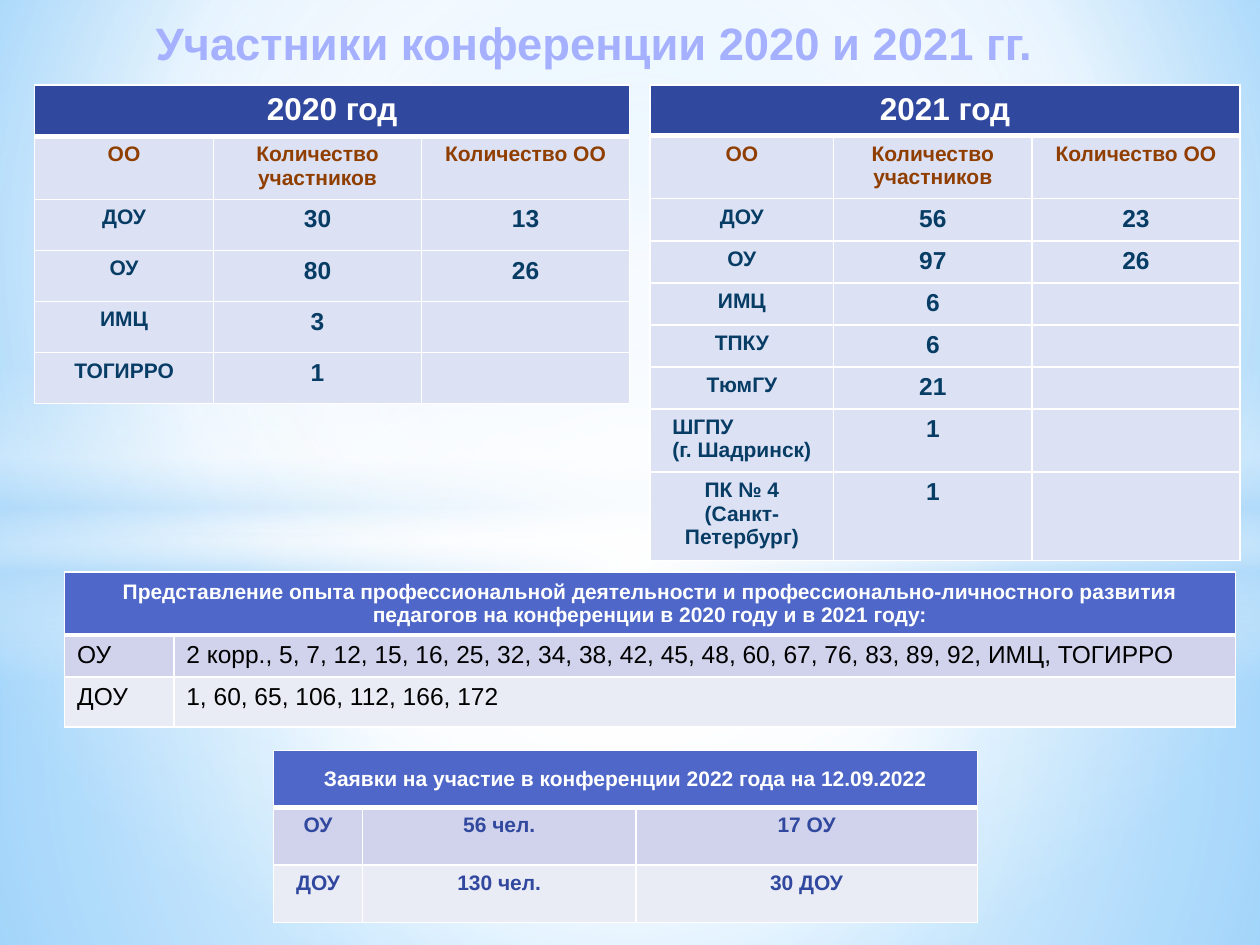
from dataclasses import dataclass
from itertools import cycle

from lxml.etree import SubElement
from pptx import Presentation
from pptx.dml.color import RGBColor
from pptx.enum.shapes import MSO_SHAPE
from pptx.enum.text import MSO_ANCHOR, PP_ALIGN
from pptx.oxml.ns import qn
from pptx.util import Pt


@dataclass(frozen=True)
class Theme:
    font: str = "Arial"
    white: str = "FFFFFF"
    haze: str = "B4DCFA"
    title: str = "A5B0FF"
    navy: str = "31489F"
    blue: str = "4E67C8"
    pale: str = "DCE1F4"
    band_dark: str = "D0D3EB"
    band_light: str = "E9EBF5"
    brown: str = "903E00"
    teal: str = "073C65"
    black: str = "000000"
    title_size: float = 25.9
    year_size: int = 18
    number_size: int = 14
    label_size: int = 12


theme = Theme()
LEFT, CENTER = PP_ALIGN.LEFT, PP_ALIGN.CENTER


def paint_gradient(fill, element, stops, focus=None):
    """Fill with (position, colour, opacity) stops: circular around focus, else top to bottom."""
    fill.gradient()
    gradient = next(element.iter(qn("a:gradFill")))
    gradient.clear()
    gradient.set("rotWithShape", "1")
    stop_list = SubElement(gradient, qn("a:gsLst"))
    for position, color, opacity in stops:
        stop = SubElement(stop_list, qn("a:gs"), pos=str(position * 1000))
        color_node = SubElement(stop, qn("a:srgbClr"), val=color)
        SubElement(color_node, qn("a:alpha"), val=str(opacity * 1000))
    if focus:
        circle = SubElement(gradient, qn("a:path"), path="circle")
        sides = {side: str(share * 1000) for side, share in zip("ltrb", focus)}
        SubElement(circle, qn("a:fillToRect"), **sides)
    else:
        SubElement(gradient, qn("a:lin"), ang="5400000", scaled="0")


def add_table(left, top, widths, heights, rows, row_fills, row_styles, header_anchor):
    """Add a table whose first row is one merged header; a style is (size, colour, bold, alignment)."""
    frame = slide.shapes.add_table(len(rows), len(widths), Pt(left), Pt(top),
                                   Pt(sum(widths)), Pt(sum(heights)))
    table = frame.table
    table.first_row = table.horz_banding = False
    for column, width in zip(table.columns, widths):
        column.width = Pt(width)
    for row, height in zip(table.rows, heights):
        row.height = Pt(height)
    table.cell(0, 0).merge(table.cell(0, len(widths) - 1))
    table.cell(0, 0).vertical_anchor = header_anchor

    for row_index, (texts, fill, styles) in enumerate(zip(rows, row_fills, row_styles)):
        for column_index in range(len(widths)):
            cell = table.cell(row_index, column_index)
            properties = cell._tc.get_or_add_tcPr()
            thick_side = {0: "B", 1: "T"}.get(row_index)
            for side in "LRTB":
                line = SubElement(properties, qn(f"a:ln{side}"),
                                  w=str(Pt(3 if side == thick_side else 1)))
                SubElement(SubElement(line, qn("a:solidFill")), qn("a:srgbClr"), val=theme.white)
            cell.fill.solid()
            cell.fill.fore_color.rgb = RGBColor.from_string(fill)
            if column_index >= len(texts):
                SubElement(cell.text_frame.paragraphs[0]._p, qn("a:endParaRPr"),
                           sz=str(theme.label_size * 100))
                continue
            size, color, bold, alignment = styles[column_index]
            for index, text in enumerate(texts[column_index].split("\n")):
                frame_text = cell.text_frame
                paragraph = frame_text.add_paragraph() if index else frame_text.paragraphs[0]
                paragraph.alignment = alignment
                run = paragraph.add_run()
                run.text = text
                run.font.name = theme.font
                run.font.size = Pt(size)
                run.font.bold = bold
                run.font.color.rgb = RGBColor.from_string(color)
    return table


presentation = Presentation()
presentation.slide_width, presentation.slide_height = Pt(720), Pt(540)
slide = presentation.slides.add_slide(presentation.slide_layouts[6])

# Background glow
paint_gradient(slide.background.fill, slide.element,
               [(0, "9ED5FF", 100), (60, theme.white, 100), (100, "5BB9FF", 100)],
               (20, 10, 20, 60))
middle = (50, 50, 50, 50)
white, haze = theme.white, theme.haze
glows = [
    (MSO_SHAPE.RECTANGLE, 304.5, 235.5, [(0, white, 92), (37, white, 77), (100, haze, 80)], middle),
    (MSO_SHAPE.RECTANGLE, 0, 304.5, [(0, white, 90), (48, white, 63), (100, haze, 80)], middle),
    (MSO_SHAPE.RECTANGLE, 209, 180, [(0, white, 0), (29, white, 30), (45, haze, 40),
                                     (55, white, 26), (65, haze, 60), (100, white, 0)], None),
    (MSO_SHAPE.OVAL, 126, 402, [(0, white, 100), (54, white, 0)], middle),
]
for kind, top, height, stops, focus in glows:
    glow = slide.shapes.add_shape(kind, 0, Pt(top), Pt(720), Pt(height))
    glow.shadow.inherit = False
    glow.line.fill.background()
    paint_gradient(glow.fill, glow.element, stops, focus)

# Title
title = slide.shapes.add_textbox(Pt(39), Pt(9.4), Pt(601), Pt(33.8))
title.text_frame.word_wrap = True
title.text_frame.vertical_anchor = MSO_ANCHOR.BOTTOM
paragraph = title.text_frame.paragraphs[0]
paragraph.alignment = CENTER
run = paragraph.add_run()
run.text = "Участники конференции 2020 и 2021 гг."
run.font.name = theme.font
run.font.size = Pt(theme.title_size)
run.font.bold = True
run.font.color.rgb = RGBColor.from_string(theme.title)

# Professional experience by institution
header_style = [(theme.label_size, theme.white, True, CENTER)]
banded_fills = [theme.blue, theme.band_dark, theme.band_light]
plain_styles = [(theme.number_size, theme.black, False, LEFT)] * 2
add_table(36.9, 326.9, [62.4, 606.8], [33.7, 22.9, 28.5], [
    ["Представление опыта профессиональной деятельности и профессионально-личностного "
     "развития педагогов на конференции в 2020 году и в 2021 году:"],
    ["ОУ", "2 корр., 5, 7, 12, 15, 16, 25, 32, 34, 38, 42, 45, 48, 60, 67, 76, 83, 89, 92, ИМЦ, ТОГИРРО"],
    ["ДОУ", "1, 60, 65, 106, 112, 166, 172"],
], banded_fills, [header_style, plain_styles, plain_styles], MSO_ANCHOR.MIDDLE)

# Participants by year
headings = ["ОО", "Количество участников", "Количество ОО"]
year_style = [(theme.year_size, theme.white, True, CENTER)]
heading_styles = [(theme.label_size, theme.brown, True, CENTER)] * 3
count_styles = [(size, theme.teal, True, CENTER)
                for size in (theme.label_size, theme.number_size, theme.number_size)]
years = [
    (19.8, [102.2, 118.9, 118.9], [29.2, 33.6] + [29.2] * 4, [
        ["2020 год"], headings, ["ДОУ", "30", "13"], ["ОУ", "80", "26"],
        ["ИМЦ", "3"], ["ТОГИРРО", "1"]]),
    (371.5, [104.9, 113.3, 118.9], [28.3, 34] + [22.9] * 5 + [34.3, 47.4], [
        ["2021 год"], headings, ["ДОУ", "56", "23"], ["ОУ", "97", "26"],
        ["ИМЦ", "6"], ["ТПКУ", "6"], ["ТюмГУ", "21"],
        ["ШГПУ\n(г. Шадринск)", "1"], ["ПК № 4\n(Санкт-Петербург)", "1"]]),
]
for left, widths, heights, rows in years:
    body_count = len(rows) - 1
    year_table = add_table(left, 48.7, widths, heights, rows,
                           [theme.navy] + [theme.pale] * body_count,
                           [year_style, heading_styles] + [count_styles] * body_count,
                           MSO_ANCHOR.TOP)
shadrinsk_cell = year_table.cell(7, 0)
shadrinsk_cell.margin_left = Pt(12.7)
for paragraph in shadrinsk_cell.text_frame.paragraphs:
    paragraph.alignment = LEFT

# Applications for the next conference
application_styles = [(theme.label_size, theme.navy, True, CENTER)] * 3
add_table(156.3, 429, [50.9, 156.2, 195.1], [32.3, 33, 33], [
    ["Заявки на участие в конференции 2022 года на 12.09.2022"],
    ["ОУ", "56 чел.", "17 ОУ"],
    ["ДОУ", "130 чел.", "30 ДОУ"],
], cycle(banded_fills), [header_style, application_styles, application_styles], MSO_ANCHOR.MIDDLE)

presentation.save("out.pptx")
